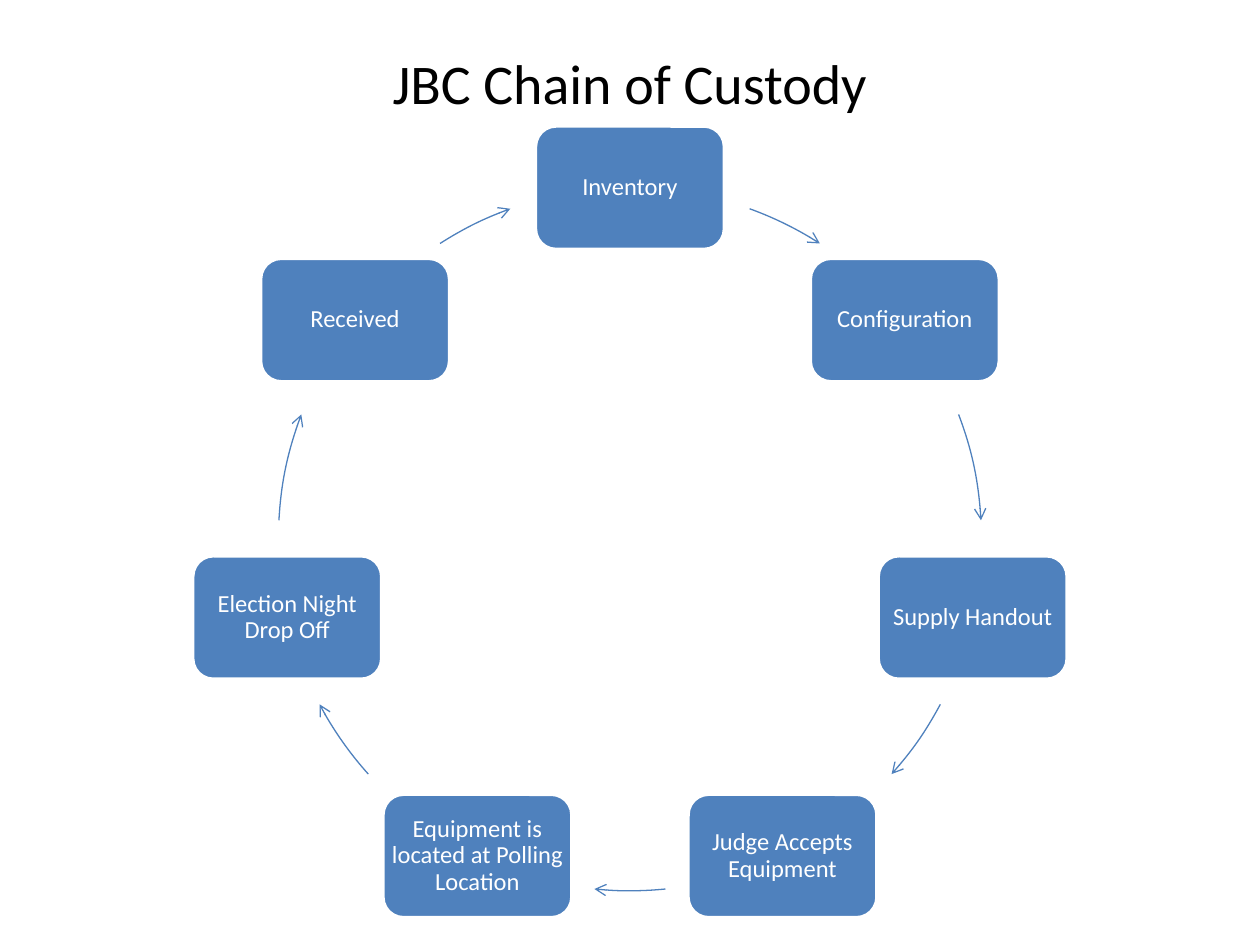
import math
from pptx import Presentation
from pptx import util as u
from pptx.dml.color import RGBColor
from pptx.enum import shapes, text
from pptx.oxml.ns import qn
from lxml import etree

# Content, clockwise from the top
TITLE = "JBC Chain of Custody"
STAGES = [
    "Inventory",
    "Configuration",
    "Supply Handout",
    "Judge Accepts Equipment",
    "Equipment is located at Polling Location",
    "Election Night Drop Off",
    "Received",
]
# Arrow start and end, degrees clockwise from the top; the left side mirrors the right
RIGHT_ARROWS = [(19.9, 32.7), (69.2, 86.9), (118, 131.9)]
BOTTOM_ARROW = (174.2, 185.8)
ARROWS = RIGHT_ARROWS + [BOTTOM_ARROW] + [
    (360 - end, 360 - start) for start, end in reversed(RIGHT_ARROWS)]

THEME = {
    "font": "Calibri",
    "blue": RGBColor(0x4F, 0x81, 0xBD),
    "white": RGBColor(255, 255, 255),
    "black": RGBColor(0, 0, 0),
    "title_size": u.Pt(32),
    "stage_size": u.Pt(14),
    "border": u.Pt(2),
    "arrow": u.Pt(0.75),
}
CENTER_X, CENTER_Y, RADIUS = 5, 4.28, 2.79
BOX_WIDTH, BOX_HEIGHT = 1.5, 0.98
# The rounded corners already inset the text, so the margin stays small
STAGE_MARGIN = u.Inches(0.01)


def write(shape, words, size, color, margin, line_spacing=1.0):
    frame = shape.text_frame
    frame_format = {"word_wrap": True, "vertical_anchor": text.MSO_ANCHOR.MIDDLE}
    for side in ("left", "right", "top", "bottom"):
        frame_format["margin_" + side] = margin
    for name, value in frame_format.items():
        setattr(frame, name, value)
    paragraph = frame.paragraphs[0]
    paragraph.text = words
    paragraph.alignment = text.PP_ALIGN.CENTER
    paragraph.line_spacing = line_spacing
    for name, value in {"name": THEME["font"], "size": size}.items():
        setattr(paragraph.runs[0].font, name, value)
    paragraph.runs[0].font.color.rgb = color


def add_shape(slide, kind, left, top, width, height, line_color, line_width):
    shape = slide.shapes.add_shape(kind, *map(u.Inches, (left, top, width, height)))
    shape.shadow.inherit = False
    shape.line.color.rgb = line_color
    shape.line.width = line_width
    return shape


def add_stage(slide, words, angle):
    left = CENTER_X + RADIUS * math.sin(angle) - BOX_WIDTH / 2
    top = CENTER_Y - RADIUS * math.cos(angle) - BOX_HEIGHT / 2
    stage = add_shape(slide, shapes.MSO_SHAPE.ROUNDED_RECTANGLE, left, top,
                      BOX_WIDTH, BOX_HEIGHT, THEME["white"], THEME["border"])
    stage.fill.solid()
    stage.fill.fore_color.rgb = THEME["blue"]
    write(stage, words, THEME["stage_size"], THEME["white"], STAGE_MARGIN, 0.9)


def add_arrow(slide, span):
    arrow = add_shape(slide, shapes.MSO_SHAPE.ARC, CENTER_X - RADIUS, CENTER_Y - RADIUS,
                      2 * RADIUS, 2 * RADIUS, THEME["blue"], THEME["arrow"])
    arrow.fill.background()
    for index, degrees in enumerate(span):
        # Arc angles run clockwise from the right, in 1/60000 degree
        arrow.adjustments[index] = (degrees - 90) % 360 * 0.6
    etree.SubElement(arrow.line._get_or_add_ln(), qn("a:tailEnd"), type="arrow")


def main():
    presentation = Presentation()
    presentation.slide_width, presentation.slide_height = u.Inches(10), u.Inches(7.5)
    slide = presentation.slides.add_slide(presentation.slide_layouts[6])

    # Title
    title = slide.shapes.add_textbox(*map(u.Inches, (0.5, 0.3, 9, 0.7)))
    write(title, TITLE, THEME["title_size"], THEME["black"], u.Inches(0.05))

    # Cycle of stages and arrows
    for index, (words, span) in enumerate(zip(STAGES, ARROWS)):
        add_stage(slide, words, 2 * math.pi * index / len(STAGES))
        add_arrow(slide, span)

    presentation.save("out.pptx")


if __name__ == "__main__":
    main()
